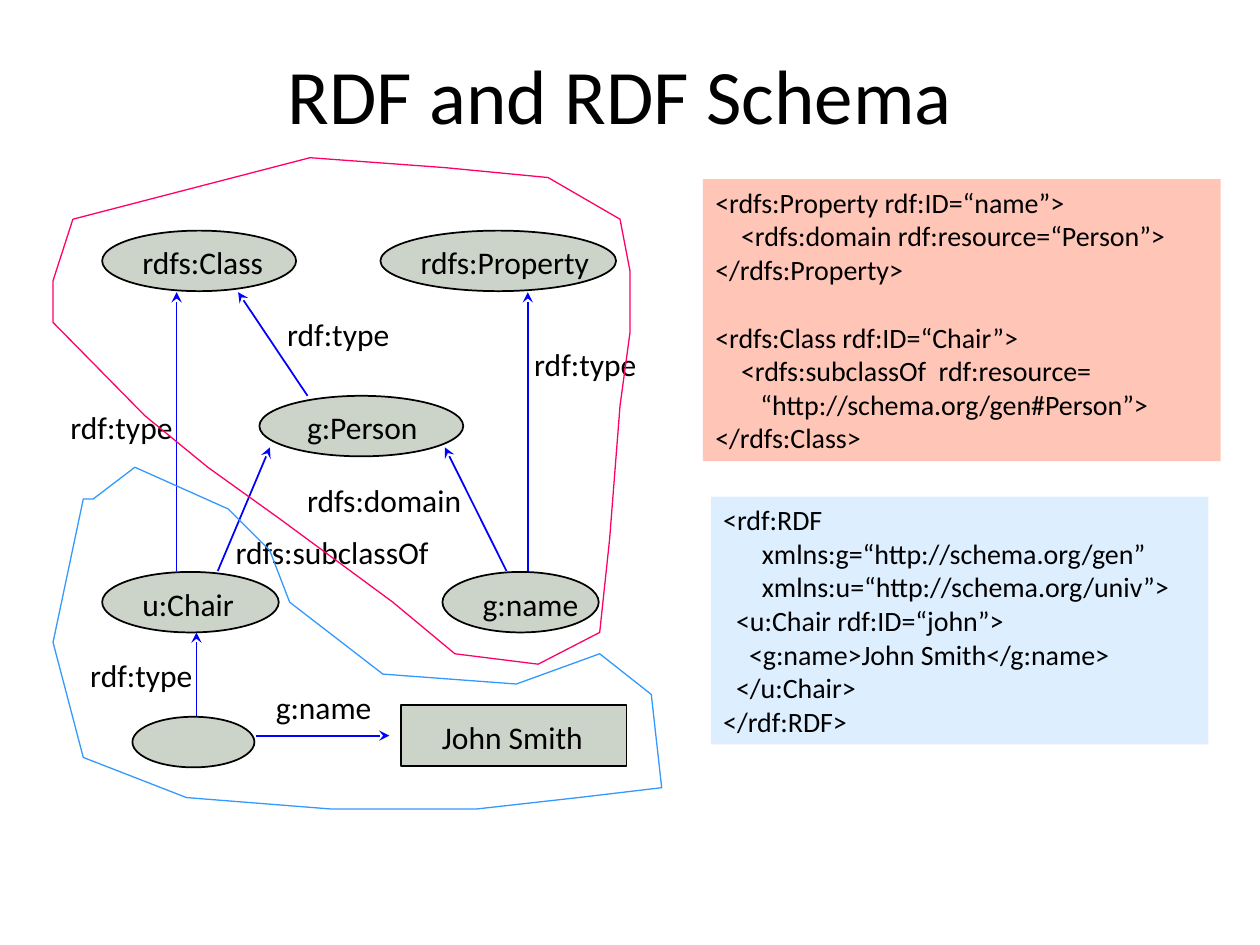
from lxml import etree
from pptx import Presentation
from pptx.dml.color import RGBColor
from pptx.enum.shapes import MSO_CONNECTOR, MSO_SHAPE
from pptx.enum.text import MSO_ANCHOR, MSO_AUTO_SIZE, PP_ALIGN
from pptx.oxml.ns import qn
from pptx.util import Cm, Pt

STRAIGHT = MSO_CONNECTOR.STRAIGHT
ELLIPSE, RECTANGLE = MSO_SHAPE.OVAL, MSO_SHAPE.RECTANGLE
BOTTOM, TOP = MSO_ANCHOR.BOTTOM, MSO_ANCHOR.TOP
GROW = MSO_AUTO_SIZE.SHAPE_TO_FIT_TEXT
CENTER, LEFT = PP_ALIGN.CENTER, PP_ALIGN.LEFT

COLORS = {
    "text": "000000", "node": "CCD3C9", "arrow": "0000FF",
    "schema_box": "FFC5B7", "data_box": "DDEEFF",
    "schema_outline": "FF0066", "data_outline": "3399FF",
}
FONT = "Calibri"
LABEL_HEIGHT = 1.02
INDENT_STEP = 0.13  # width of one code column, in cm
CODE_LINE = 19.5  # height of one code line, in points

# shape, left, top, width, height, label, label width, label offset
NODES = [
    (ELLIPSE, 2.06, 11.53, 3.56, 1.22, "u:Chair", 2.41, 0.56),
    (RECTANGLE, 8.08, 14.22, 4.55, 1.22, "John Smith", 3.38, 0.58),
    (ELLIPSE, 2.67, 14.45, 2.46, 1.02, None, 0, 0),
    (ELLIPSE, 5.23, 7.98, 4.11, 1.22, "g:Person", 2.79, 0.71),
    (ELLIPSE, 8.92, 11.53, 3.15, 1.22, "g:name", 2.46, 0.56),
    (ELLIPSE, 2.06, 4.65, 3.91, 1.22, "rdfs:Class", 3.05, 0.56),
    (ELLIPSE, 7.67, 4.65, 4.75, 1.22, "rdfs:Property", 3.96, 0.56),
]
ARROWS = [
    (3.96, 14.43, 3.96, 12.75),
    (5.16, 14.83, 7.85, 14.83),
    (3.56, 11.51, 3.56, 5.89),
    (6.2, 7.98, 4.8, 5.89),
    (10.64, 11.51, 10.64, 5.89),
    (4.39, 11.51, 5.44, 9.02),
    (10.21, 11.51, 8.97, 9.02),
]
ARROW_LABELS = [
    ("rdf:type", 1.57, 13.11, 2.62),
    ("g:name", 5.31, 13.74, 2.46),
    ("rdf:type", 10.52, 6.83, 2.62),
    ("rdf:type", 5.54, 6.22, 2.62),
    ("rdf:type", 1.17, 8.1, 2.62),
    ("rdfs:subclassOf", 4.5, 10.62, 4.47),
    ("rdfs:domain", 5.94, 9.58, 3.68),
]
# indent columns, text, blank lines before
DATA_CODE = [
    (0, "<rdf:RDF", 0),
    (6, "xmlns:g=“http://schema.org/gen”", 0),
    (6, "xmlns:u=“http://schema.org/univ”>", 0),
    (2, "<u:Chair rdf:ID=“john”>", 0),
    (4, "<g:name>John Smith</g:name>", 0),
    (2, "</u:Chair>", 0),
    (0, "</rdf:RDF>", 0),
]
SCHEMA_CODE = [
    (0, "<rdfs:Property rdf:ID=“name”>", 0),
    (4, "<rdfs:domain rdf:resource=“Person”>", 0),
    (0, "</rdfs:Property>", 0),
    (0, "<rdfs:Class rdf:ID=“Chair”>", 1),
    (4, "<rdfs:subclassOf  rdf:resource=", 0),
    (7, "“http://schema.org/gen#Person”>", 0),
    (0, "</rdfs:Class>", 0),
]
SCHEMA_OUTLINE = [
    (1.47, 4.42), (6.25, 3.18), (8.97, 3.38), (11.05, 3.58), (12.5, 4.42),
    (12.7, 5.46), (12.7, 6.71), (12.5, 8.18), (12.29, 10.87), (12.09, 12.75),
    (10.85, 13.39), (9.17, 13.18), (7.92, 12.14), (5.64, 10.46),
    (4.19, 9.42), (2.92, 8.38), (1.07, 6.5), (1.07, 5.66),
]
DATA_OUTLINE = [
    (1.68, 10.06), (1.07, 12.95), (1.68, 15.27), (3.76, 16.08), (6.68, 16.31),
    (9.6, 16.31), (11.66, 16.08), (13.34, 15.88), (13.13, 14), (12.09, 13.18),
    (10.41, 13.79), (7.72, 13.59), (5.84, 12.14), (5.44, 11.1), (4.6, 10.26),
    (2.72, 9.42), (1.88, 10.06),
]


def color(name):
    return RGBColor.from_string(COLORS[name])


def apply_format(target, values):
    for attribute, value in values.items():
        setattr(target, attribute, value)


class SlideBuilder:
    """Holds the text style and the slide that elements are added to."""

    def __init__(self, slide):
        self.slide = slide
        self.shapes = slide.shapes

    def add_text(self, paragraph, text, size, alignment=LEFT):
        run = paragraph.add_run()
        run.text = text
        paragraph.alignment = alignment
        apply_format(run.font, {"name": FONT, "size": Pt(size)})
        run.font.color.rgb = color("text")

    def title(self, text, left, top, width, height):
        title = self.shapes.title
        apply_format(title, {"left": Cm(left), "top": Cm(top),
                             "width": Cm(width), "height": Cm(height)})
        title.text_frame.vertical_anchor = BOTTOM
        self.add_text(title.text_frame.paragraphs[0], text, 44, CENTER)

    def shape(self, kind, left, top, width, height, fill):
        shape = self.shapes.add_shape(kind, Cm(left), Cm(top), Cm(width), Cm(height))
        shape.shadow.inherit = False
        shape.fill.solid()
        shape.fill.fore_color.rgb = color(fill)
        return shape

    def code_box(self, lines, left, top, width, height, fill):
        box = self.shape(RECTANGLE, left, top, width, height, fill)
        box.line.fill.background()
        frame = box.text_frame
        apply_format(frame, {"word_wrap": True, "vertical_anchor": TOP,
                             "auto_size": GROW})
        for index, (columns, text, blank_lines) in enumerate(lines):
            paragraph = frame.add_paragraph() if index else frame.paragraphs[0]
            self.add_text(paragraph, text, 16)
            if columns:
                properties = paragraph._p.get_or_add_pPr()
                properties.set("marL", str(int(Cm(columns * INDENT_STEP))))
            if blank_lines:
                paragraph.space_before = Pt(blank_lines * CODE_LINE)

    def label(self, text, left, top, width):
        box = self.shapes.add_textbox(Cm(left), Cm(top), Cm(width), Cm(LABEL_HEIGHT))
        apply_format(box.text_frame, {"word_wrap": False, "auto_size": GROW})
        self.add_text(box.text_frame.paragraphs[0], text, 18)

    def node(self, kind, left, top, width, height):
        shape = self.shape(kind, left, top, width, height, "node")
        shape.line.color.rgb = color("text")
        shape.line.width = Pt(1)

    def arrow(self, *ends):
        connector = self.shapes.add_connector(STRAIGHT, *map(Cm, ends))
        connector.line.color.rgb = color("arrow")
        connector.line.width = Pt(1)
        properties = connector._element.spPr
        line = properties.find(qn("a:ln"))
        etree.SubElement(line, qn("a:tailEnd"), type="stealth", w="med", len="med")
        etree.SubElement(properties, qn("a:effectLst"))

    def outline(self, points, line_color):
        first, *rest = [(Cm(x), Cm(y)) for x, y in points]
        builder = self.shapes.build_freeform(*first)
        builder.add_line_segments(rest, close=True)
        shape = builder.convert_to_shape()
        shape.shadow.inherit = False
        shape.fill.background()
        shape.line.color.rgb = color(line_color)
        shape.line.width = Pt(0.75)


def main():
    presentation = Presentation()
    apply_format(presentation, {"slide_width": Cm(25.4), "slide_height": Cm(19.05)})
    layout = presentation.slide_layouts.get_by_name("Title Only")
    builder = SlideBuilder(presentation.slides.add_slide(layout))

    builder.title("RDF and RDF Schema", 1.07, 0.56, 22.86, 2.39)
    builder.code_box(DATA_CODE, 14.33, 10.01, 10.03, 5, "data_box")
    builder.code_box(SCHEMA_CODE, 14.17, 3.61, 10.44, 5.69, "schema_box")
    for kind, left, top, width, height, text, text_width, offset in NODES:
        builder.node(kind, left, top, width, height)
        if text:
            builder.label(text, left + offset, top + 0.13, text_width)
    for ends in ARROWS:
        builder.arrow(*ends)
    for label in ARROW_LABELS:
        builder.label(*label)
    builder.outline(SCHEMA_OUTLINE, "schema_outline")
    builder.outline(DATA_OUTLINE, "data_outline")
    presentation.save("out.pptx")


if __name__ == "__main__":
    main()
